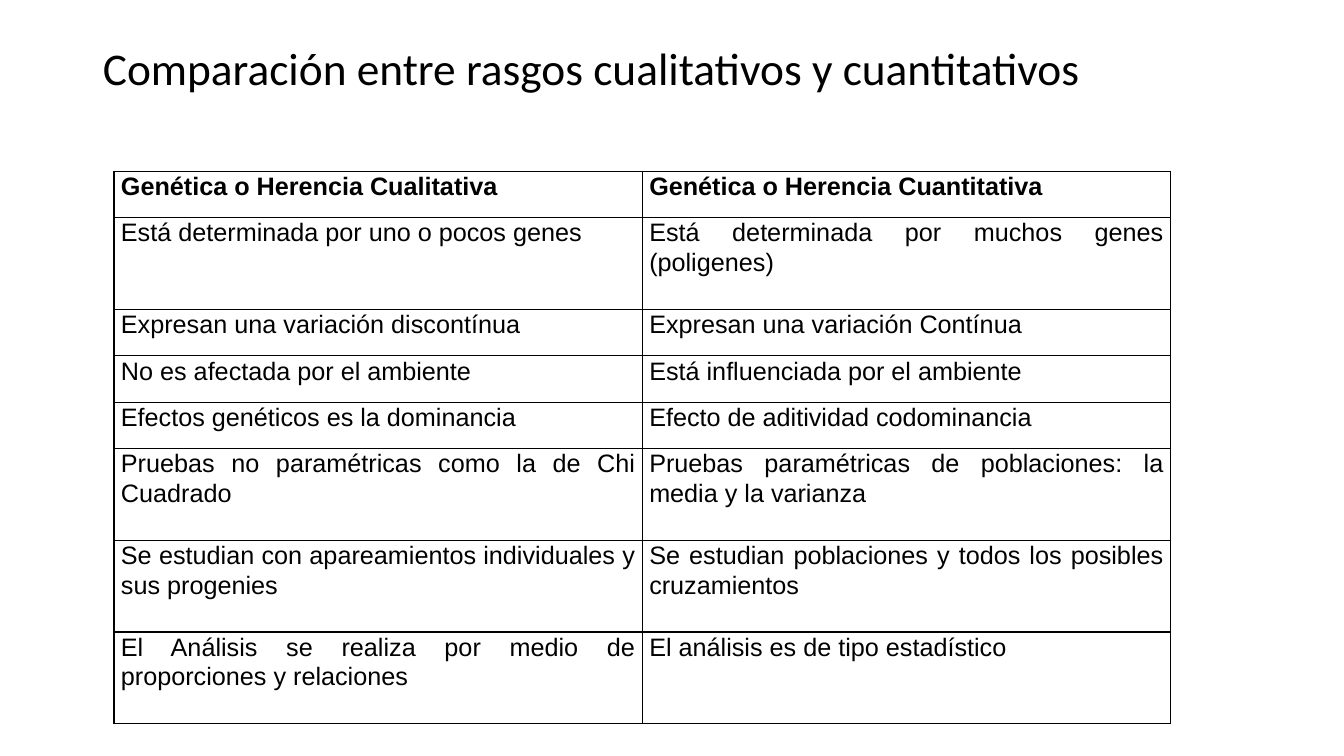
from dataclasses import dataclass

from lxml.etree import SubElement
from pptx import Presentation
from pptx.dml.color import RGBColor
from pptx.enum.text import MSO_ANCHOR, MSO_AUTO_SIZE, PP_ALIGN
from pptx.oxml.ns import qn
from pptx.util import Inches, Pt

COLORS = {"text": "000000", "border": "000000", "cell": "FFFFFF"}


@dataclass
class Row:
    """One row of the comparison table."""
    qualitative: str
    quantitative: str
    height: float = 0.46
    bold: bool = False


ROWS = [
    Row("Genética o Herencia Cualitativa", "Genética o Herencia Cuantitativa", bold=True),
    Row("Está determinada por uno o pocos genes",
        "Está determinada por muchos genes (poligenes)", 0.91),
    Row("Expresan una variación discontínua", "Expresan una variación Contínua"),
    Row("No es afectada por el ambiente", "Está influenciada por el ambiente"),
    Row("Efectos genéticos es la dominancia", "Efecto de aditividad codominancia"),
    Row("Pruebas no paramétricas como la de Chi Cuadrado",
        "Pruebas paramétricas de poblaciones: la media y la varianza", 0.91),
    Row("Se estudian con apareamientos individuales y sus progenies",
        "Se estudian poblaciones y todos los posibles cruzamientos", 0.91),
    Row("El Análisis se realiza por medio de proporciones y relaciones",
        "El análisis es de tipo estadístico", 0.91),
]


def format_run(r, font: str, size: float, bold: bool = False) -> None:
    """Set the font, size, weight and colour of a run."""
    r.font.name = font
    r.font.size = Pt(size)
    r.font.bold = bold
    r.font.color.rgb = RGBColor.from_string(COLORS["text"])


def add_borders(cell) -> None:
    """Draw a one-point line on every side of a cell."""
    props = cell._tc.get_or_add_tcPr()
    for side in ("a:lnL", "a:lnR", "a:lnT", "a:lnB"):
        line = SubElement(props, qn(side), w=str(Pt(1)))
        fill = SubElement(line, qn("a:solidFill"))
        SubElement(fill, qn("a:srgbClr"), val=COLORS["border"])


def fill_cell(cell, text: str, bold: bool) -> None:
    """Write justified text in a bordered cell."""
    add_borders(cell)
    cell.fill.solid()
    cell.fill.fore_color.rgb = RGBColor.from_string(COLORS["cell"])
    cell.margin_left = cell.margin_right = Inches(0.07)
    cell.margin_top = cell.margin_bottom = Inches(0)
    p = cell.text_frame.paragraphs[0]
    p.text = text
    p.alignment = PP_ALIGN.JUSTIFY
    p.line_spacing = 1.05
    p.space_after = Pt(8)
    format_run(p.runs[0], "Arial", 18, bold)


def set_title(s, text: str) -> None:
    """Place and format the slide title."""
    sp = s.shapes.title
    sp.left, sp.top = Inches(0.92), Inches(0.4)
    sp.width, sp.height = Inches(11.5), Inches(0.6)
    tf = sp.text_frame
    tf.text = text
    tf.word_wrap = True
    tf.auto_size = MSO_AUTO_SIZE.NONE
    tf.vertical_anchor = MSO_ANCHOR.MIDDLE
    p = tf.paragraphs[0]
    p.alignment = PP_ALIGN.LEFT
    p.line_spacing = 0.9
    format_run(p.runs[0], "Calibri", 32.4)


def add_comparison(s, rows: list[Row]) -> None:
    """Add the two-column comparison table."""
    height = sum(row.height for row in rows)
    table = s.shapes.add_table(len(rows), 2, Inches(1.13), Inches(1.7),
                               Inches(10.48), Inches(height)).table
    table.first_row = table.horz_banding = False
    for i, row in enumerate(rows):
        table.rows[i].height = Inches(row.height)
        for j, text in enumerate((row.qualitative, row.quantitative)):
            fill_cell(table.cell(i, j), text, row.bold)


def main() -> None:
    """Build and save the slide."""
    prs = Presentation()
    prs.slide_width, prs.slide_height = Inches(13.33), Inches(7.5)
    s = prs.slides.add_slide(prs.slide_layouts[5])
    set_title(s, "Comparación entre rasgos cualitativos y cuantitativos")
    add_comparison(s, ROWS)
    prs.save("out.pptx")


if __name__ == "__main__":
    main()
